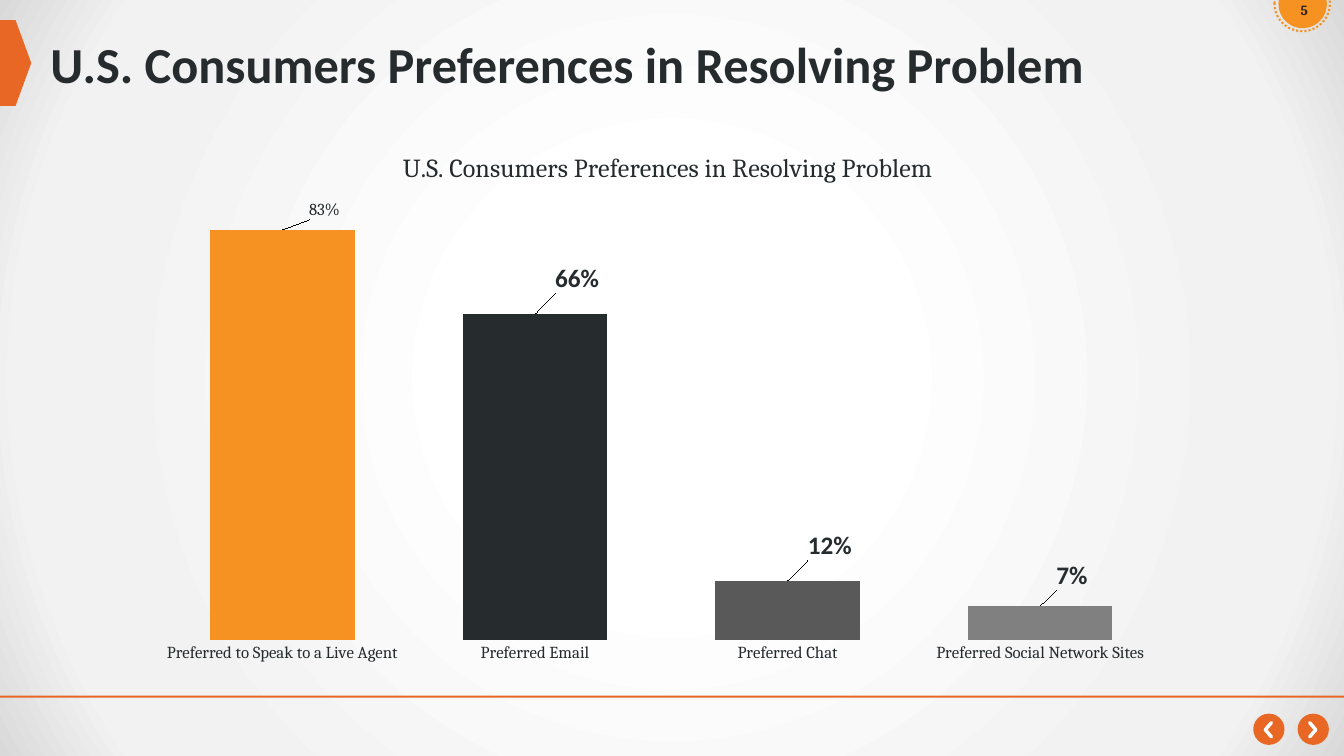
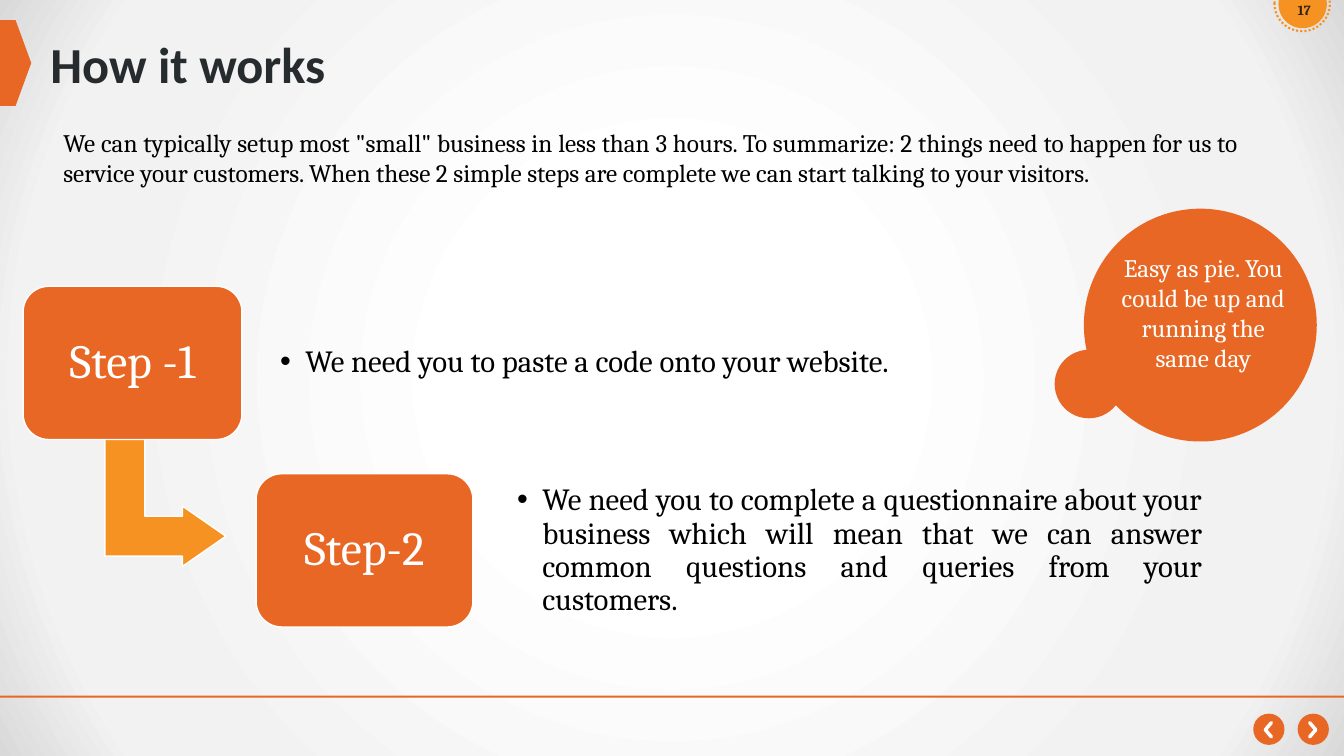
from lxml.etree import SubElement
from pptx import Presentation
from pptx.chart.data import CategoryChartData
from pptx.dml.color import RGBColor
from pptx.enum.chart import XL_CHART_TYPE, XL_LABEL_POSITION, XL_TICK_MARK
from pptx.enum.dml import MSO_LINE
from pptx.enum.shapes import MSO_SHAPE
from pptx.enum.text import MSO_ANCHOR, MSO_AUTO_SIZE, PP_ALIGN
from pptx.oxml import parse_xml
from pptx.oxml.ns import nsdecls, qn
from pptx.util import Emu, Pt

PX = 9144
ORANGE = RGBColor(0xE8, 0x67, 0x24)
AMBER = RGBColor(0xF6, 0x92, 0x21)
INK = RGBColor(0x26, 0x2B, 0x2E)
BROWN = RGBColor(0x31, 0x20, 0x16)
GREY = RGBColor(0x59, 0x59, 0x59)
SILVER = RGBColor(0x80, 0x80, 0x80)
BLACK = RGBColor(0, 0, 0)
WHITE = RGBColor(0xFF, 0xFF, 0xFF)
STOPS = [(0, "FFFFFF"), (27, "FFFFFF"), (74, "F2F2F2"), (85, "F2F2F2"), (100, "D9D9D9")]
HEAD = "U.S. Consumers Preferences in Resolving Problem"
BARS = [
    ("Preferred to Speak to a Live Agent", 0.83, AMBER, (0.04, -0.06)),
    ("Preferred Email", 0.66, INK, (0.04, -0.1)),
    ("Preferred Chat", 0.12, GREY, (0.04, -0.1)),
    ("Preferred Social Network Sites", 0.07, SILVER, (0.03, -0.09)),
]
STEPS = [
    ("Step -1", (23, 284, 217, 152), "We need you to paste a code onto your website.",
     (268, 259, 650, 201)),
    ("Step-2", (254, 470, 215, 152),
     "We need you to complete a questionnaire about your business which will mean that "
     "we can answer common questions and queries from your customers.",
     (503, 446, 699, 201)),
]


def scale(box):
    return [Emu(n * PX) for n in box]


def style(font, size, color=INK, face="Cambria", bold=False):
    font.size, font.name, font.bold = Pt(size), face, bold
    font.color.rgb = color


def write(frame, text, size, align=PP_ALIGN.LEFT, space=None, bullet=False, **look):
    para = frame.paragraphs[0]
    run = para.add_run()
    run.text = text
    style(run.font, size, **look)
    para.alignment = align
    if space:
        para.line_spacing = space
    if bullet:
        props = para._p.get_or_add_pPr()
        props.set("marL", str(25 * PX))
        props.set("indent", str(-25 * PX))
        SubElement(props, qn("a:buFont"), typeface="Arial")
        SubElement(props, qn("a:buChar"), char="•")


def label(slide, box, text, size, anchor=MSO_ANCHOR.TOP, **look):
    frame = slide.shapes.add_textbox(*scale(box)).text_frame
    frame.word_wrap = True
    frame.vertical_anchor = anchor
    write(frame, text, size, **look)


def draw(slide, kind, box, fill=None, line=None, width=1):
    shape = slide.shapes.add_shape(kind, *scale(box))
    shape.shadow.inherit = False
    if fill is None:
        shape.fill.background()
    else:
        shape.fill.solid()
        shape.fill.fore_color.rgb = fill
    if line is None:
        shape.line.fill.background()
    else:
        shape.line.color.rgb = line
        shape.line.width = Pt(width)
    return shape


def button(slide, left, side):
    draw(slide, MSO_SHAPE.OVAL, (left, 708, 31, 31), ORANGE)
    mid = left + 15
    pen = slide.shapes.build_freeform(mid - 3 * side, 717, scale=PX)
    pen.add_line_segments([(mid + 3 * side, 724), (mid - 3 * side, 731)], close=False)
    arrow = pen.convert_to_shape()
    arrow.shadow.inherit = False
    arrow.fill.background()
    arrow.line.color.rgb = WHITE
    arrow.line.width = Pt(2.5)
    edge = arrow.line._get_or_add_ln()
    edge.set("cap", "rnd")
    SubElement(edge, qn("a:round"))


def paint(master):
    master.background.fill.gradient()
    old = next(master.element.iter(qn("a:gradFill")))
    stops = "".join(
        f'<a:gs pos="{at * 1000}"><a:srgbClr val="{tone}"/></a:gs>' for at, tone in STOPS)
    new = parse_xml(
        f'<a:gradFill {nsdecls("a")} rotWithShape="1"><a:gsLst>{stops}</a:gsLst>'
        '<a:path path="circle"><a:fillToRect l="50000" t="50000" r="50000" b="50000"/>'
        '</a:path></a:gradFill>')
    old.getparent().replace(old, new)


def start(deck, title, page):
    slide = deck.slides.add_slide(deck.slide_layouts[5])
    draw(slide, MSO_SHAPE.PENTAGON, (0, 20, 31, 85), ORANGE)
    button(slide, 1243, -1)
    button(slide, 1287, 1)
    draw(slide, MSO_SHAPE.RECTANGLE, (0, 690, 1333, 2), ORANGE)
    draw(slide, MSO_SHAPE.OVAL, (1268, -20, 48, 48), AMBER)
    ring = draw(slide, MSO_SHAPE.OVAL, (1264, -24, 55, 55), line=AMBER, width=1.5)
    ring.line.dash_style = MSO_LINE.ROUND_DOT
    head = slide.shapes.title
    head.left, head.top, head.width, head.height = scale((40, 31, 1254, 72))
    frame = head.text_frame
    frame.auto_size = MSO_AUTO_SIZE.NONE
    frame.vertical_anchor = MSO_ANCHOR.MIDDLE
    write(frame, title, 36, face="Calibri", bold=True, space=0.9)
    label(slide, (1267, -3, 53, 51), page, 10, color=BROWN, bold=True, align=PP_ALIGN.CENTER)
    return slide


def place(node, spot, edge=True, **sizes):
    for old in node.findall(qn("c:layout")):
        node.remove(old)
    modes = '<c:xMode val="edge"/><c:yMode val="edge"/>' if edge else ""
    inner = '<c:layoutTarget val="inner"/>' if "w" in sizes else ""
    parts = "".join(f'<c:{key} val="{val}"/>' for key, val in sizes.items())
    node.insert(spot, parse_xml(
        f'<c:layout {nsdecls("c")}><c:manualLayout>{inner}{modes}{parts}'
        '</c:manualLayout></c:layout>'))


def clear(chart):
    root = chart._chartSpace
    blank = f'<c:spPr {nsdecls("c", "a")}><a:noFill/><a:ln><a:noFill/></a:ln></c:spPr>'
    root.find(qn("c:chart")).addnext(parse_xml(blank))
    plot = next(root.iter(qn("c:plotArea")))
    plot.append(parse_xml(blank))
    place(plot, 0, x=0.02, y=0.13, w=0.96, h=0.81)


def graph(slide):
    data = CategoryChartData(number_format="0%")
    data.categories = [bar[0] for bar in BARS]
    data.add_series(HEAD, [bar[1] for bar in BARS])
    chart = slide.shapes.add_chart(
        XL_CHART_TYPE.COLUMN_CLUSTERED, *scale((134, 123, 1044, 545)), data).chart
    style(chart.font, 10)
    chart.has_legend = False
    chart.has_title = True
    write(chart.chart_title.text_frame, HEAD, 18.6, align=PP_ALIGN.CENTER)
    place(next(chart._chartSpace.iter(qn("c:title"))), 1, x=0.25, y=0.04)
    clear(chart)
    base, rise = chart.category_axis, chart.value_axis
    style(base.tick_labels.font, 12)
    base.major_tick_mark = XL_TICK_MARK.NONE
    base.format.line.fill.background()
    rise.visible = rise.has_major_gridlines = False
    rise.minimum_scale, rise.maximum_scale = 0, 0.9
    plot = chart.plots[0]
    plot.gap_width, plot.overlap, plot.vary_by_categories = 75, 40, False
    row = plot.series[0]
    for spot, bar in enumerate(BARS):
        point = row.points[spot]
        point.format.fill.solid()
        point.format.fill.fore_color.rgb = bar[2]
        note = point.data_label
        if spot == 0:
            style(note.font, 12)
        else:
            style(note.font, 18, face="Calibri", bold=True)
        note.position = XL_LABEL_POSITION.INSIDE_END
    for node, bar in zip(row._element.iter(qn("c:dLbl")), BARS):
        place(node, 1, edge=False, x=bar[3][0], y=bar[3][1])


def step(slide, name, box, text, area):
    card = draw(slide, MSO_SHAPE.ROUNDED_RECTANGLE, box, ORANGE, WHITE)
    card.text_frame.vertical_anchor = MSO_ANCHOR.MIDDLE
    write(card.text_frame, name, 34, color=WHITE, align=PP_ALIGN.CENTER, space=0.9)
    label(slide, area, text, 22, anchor=MSO_ANCHOR.MIDDLE, color=BLACK,
          align=PP_ALIGN.JUSTIFY, space=0.9, bullet=True)


def flow(slide):
    bend = draw(slide, MSO_SHAPE.BENT_UP_ARROW, (92, 430, 144, 120), AMBER, WHITE)
    bend.rotation = 90
    for spot, ratio in enumerate((0.33, 0.25, 0.36)):
        bend.adjustments[spot] = ratio
    for item in STEPS:
        step(slide, *item)
    label(slide, (53, 121, 1185, 71),
          'We can typically setup most "small" business in less than 3 hours. To summarize: '
          '2 things need to happen for us to service your customers. When these 2 simple '
          'steps are complete we can start talking to your visitors.',
          18, color=BLACK, align=PP_ALIGN.JUSTIFY)
    for box in ((1075, 207, 231, 231), (1046, 347, 68, 68)):
        draw(slide, MSO_SHAPE.OVAL, box, ORANGE)
    label(slide, (1102, 245, 183, 131),
          "Easy as pie. You could be up and running the same day",
          18, color=WHITE, align=PP_ALIGN.CENTER)


def main():
    deck = Presentation()
    deck.slide_width, deck.slide_height = scale((1333, 750))
    paint(deck.slide_master)
    graph(start(deck, HEAD, "5"))
    flow(start(deck, "How it works", "17"))
    deck.save("out.pptx")


if __name__ == "__main__":
    main()
